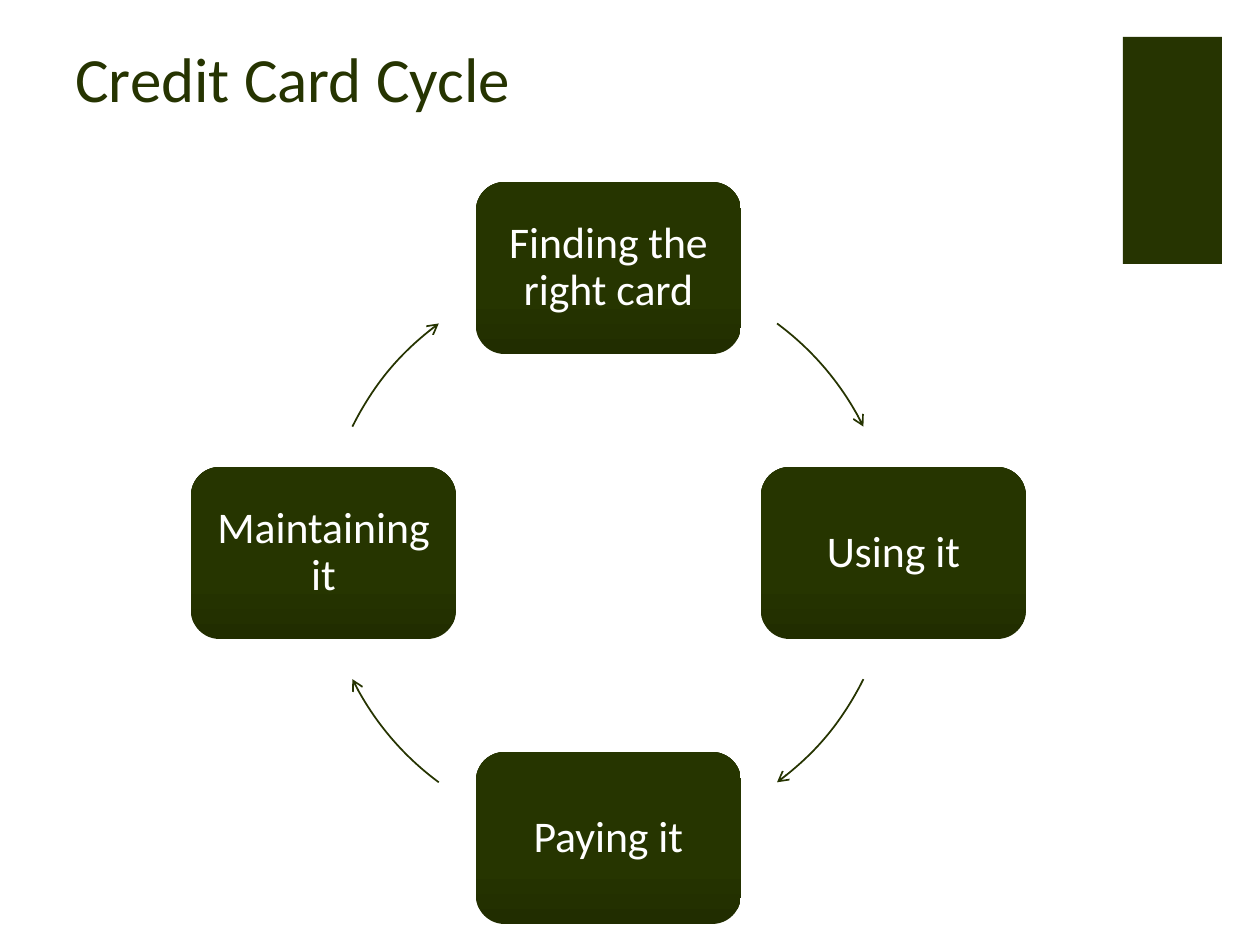
from lxml import etree
from pptx import Presentation
from pptx.dml.color import RGBColor
from pptx.enum.shapes import MSO_SHAPE
from pptx.enum.text import MSO_ANCHOR, PP_ALIGN
from pptx.oxml.ns import qn
from pptx.util import Emu, Pt

PX = 914400 // 126
GREEN = RGBColor(0x26, 0x34, 0x01)
TOP = RGBColor(0x26, 0x35, 0x00)
BASE = RGBColor(0x21, 0x2D, 0x00)
WHITE = RGBColor(0xFF, 0xFF, 0xFF)
RECT, ROUND, ARC = MSO_SHAPE.RECTANGLE, MSO_SHAPE.ROUNDED_RECTANGLE, MSO_SHAPE.ARC
MIDDLE, BOTTOM = MSO_ANCHOR.MIDDLE, MSO_ANCHOR.BOTTOM
CENTER = PP_ALIGN.CENTER


def place(kind, *box):
    """Add a shape at left, top, width, height in px, without a shadow."""
    shape = slide.shapes.add_shape(kind, *[Emu(n * PX) for n in box])
    shape.shadow.inherit = False
    return shape


def style(para, size, color):
    font = para.runs[0].font
    font.name = "Calibri"
    font.size = Pt(size)
    font.color.rgb = color


prs = Presentation()
prs.slide_width, prs.slide_height = Emu(1260 * PX), Emu(945 * PX)
slide = prs.slides.add_slide(prs.slide_layouts[6])

bar = place(RECT, 1123, 37, 99, 227)
bar.fill.solid()
bar.fill.fore_color.rgb = GREEN
bar.line.fill.background()

title = slide.shapes.add_textbox(*[Emu(n * PX) for n in (63, 49, 897, 72)])
frame = title.text_frame
frame.word_wrap = True
frame.vertical_anchor = BOTTOM
frame.text = "Credit Card Cycle"
style(frame.paragraphs[0], 36, GREEN)

# Steps run clockwise around the ring; each arc leads on to the next step.
MID_X, MID_Y, RADIUS = 608, 553, 285
WIDE, HIGH = 265, 172
SWEEP = 27.3
steps = [
    ("Finding the right card", 0, -1, 306.4),
    ("Using it", 1, 0, 26.3),
    ("Paying it", 0, 1, 126.4),
    ("Maintaining it", -1, 0, 206.3),
]
for text, dx, dy, start in steps:
    left = MID_X + dx * RADIUS - WIDE // 2
    top = MID_Y + dy * RADIUS - HIGH // 2
    card = place(ROUND, left, top, WIDE, HIGH)
    card.fill.gradient()
    card.fill.gradient_angle = 90
    for stop, color, spot in zip(card.fill.gradient_stops, (BASE, TOP), (0, 0.35)):
        stop.color.rgb = color
        stop.position = spot
    card.line.fill.background()
    frame = card.text_frame
    frame.word_wrap = True
    frame.vertical_anchor = MIDDLE
    frame.margin_left = frame.margin_right = Emu(13 * PX)
    frame.margin_top = frame.margin_bottom = Emu(13 * PX)
    frame.text = text
    para = frame.paragraphs[0]
    para.alignment = CENTER
    para.line_spacing = 0.9
    style(para, 25, WHITE)

    arc = place(ARC, MID_X - RADIUS, MID_Y - RADIUS, 2 * RADIUS, 2 * RADIUS)
    # Angles are stored in 60000ths of a degree, adjustments in 100000ths.
    arc.adjustments[0] = start * 0.6
    arc.adjustments[1] = (start + SWEEP) * 0.6
    arc.fill.background()
    arc.line.color.rgb = GREEN
    arc.line.width = Pt(1)
    etree.SubElement(arc.line._get_or_add_ln(), qn("a:tailEnd"), type="arrow")

prs.save("out.pptx")
